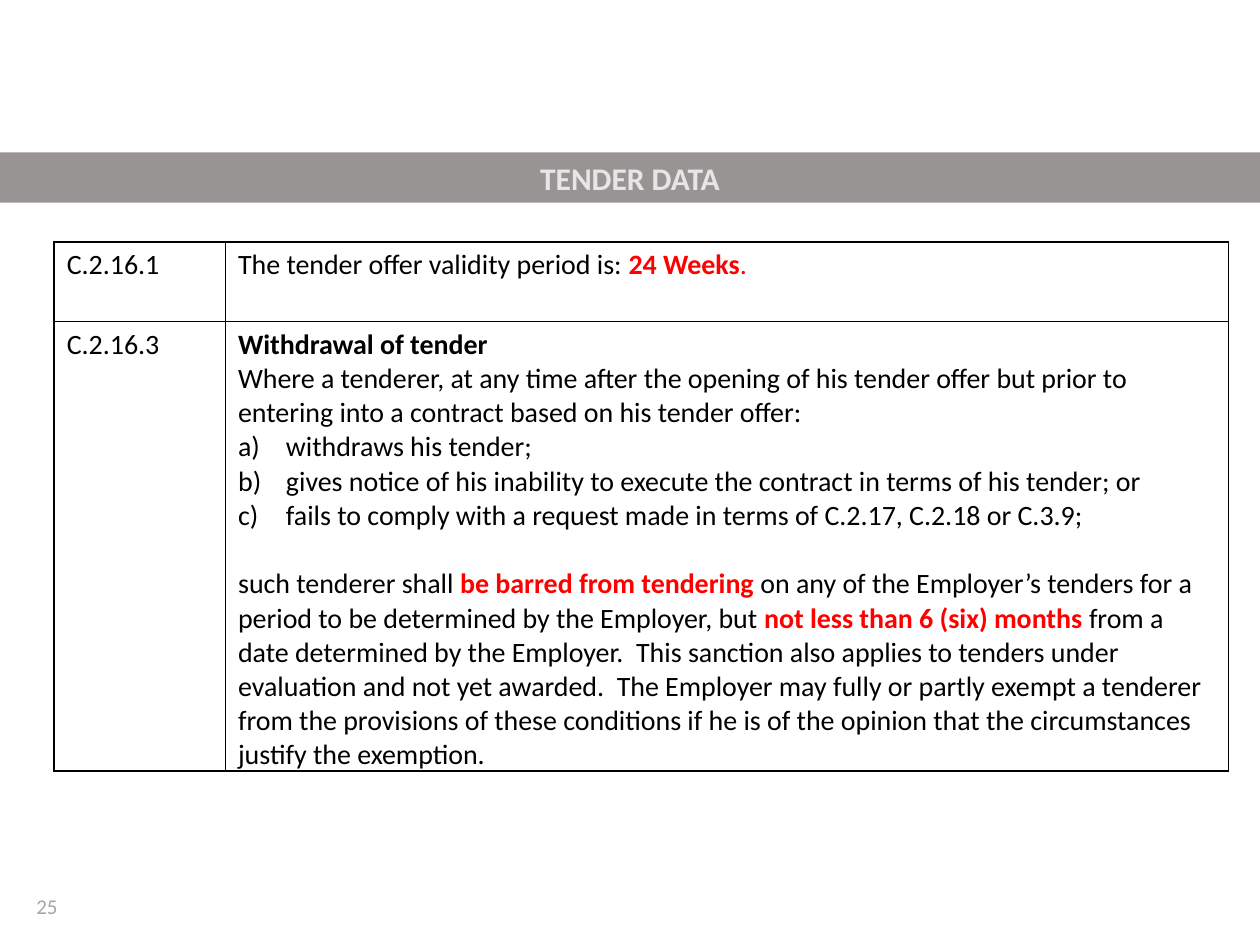
from lxml import etree
from pptx import Presentation
from pptx.dml.color import RGBColor
from pptx.enum import shapes, text
from pptx.oxml import ns
from pptx.util import Inches, Pt

BLACK = RGBColor(0x00, 0x00, 0x00)
RED = RGBColor(0xFF, 0x00, 0x00)
BAND_GRAY = RGBColor(0x98, 0x94, 0x94)
TITLE_GRAY = RGBColor(0xE7, 0xE6, 0xE6)
NUMBER_GRAY = RGBColor(0xA6, 0xA6, 0xA6)

PERIOD = [("The tender offer validity period is: ", BLACK, False),
          ("24 Weeks", RED, True), (".", RED, False)]
HEADING = [("Withdrawal of tender", BLACK, True)]
CONDITION = [("Where a tenderer, at any time after the opening of his tender offer but "
              "prior to entering into a contract based on his tender offer:", BLACK, False)]
GROUNDS = [
    "withdraws his tender;",
    "gives notice of his inability to execute the contract in terms of his tender; or",
    "fails to comply with a request made in terms of C.2.17, C.2.18 or C.3.9;",
]
SANCTION = [
    ("such tenderer shall ", BLACK, False),
    ("be barred from tendering ", RED, True),
    ("on any of the Employer’s tenders for a period to be determined by the Employer, "
     "but ", BLACK, False),
    ("not less than 6 (six) months ", RED, True),
    ("from a date determined by the Employer.  This sanction also applies to tenders "
     "under evaluation and not yet awarded.  The Employer may fully or partly exempt a "
     "tenderer from the provisions of these conditions if he is of the opinion that the "
     "circumstances justify the exemption.", BLACK, False),
]


class TenderSlide:
    font = "Calibri"
    body_size = 16

    def __init__(self, slide):
        self.slide = slide

    def runs(self, paragraph, pieces, size):
        for wording, color, bold in pieces:
            run = paragraph.add_run()
            run.text = wording
            run.font.name = self.font
            run.font.size = Pt(size)
            run.font.bold = bold
            run.font.color.rgb = color

    def band(self, left, top, width, height, title):
        band = self.slide.shapes.add_shape(
            shapes.MSO_SHAPE.RECTANGLE, Inches(left), Inches(top), Inches(width), Inches(height))
        band.shadow.inherit = False
        band.fill.solid()
        band.fill.fore_color.rgb = BAND_GRAY
        band.line.fill.background()
        band.text_frame.vertical_anchor = text.MSO_ANCHOR.MIDDLE
        heading = band.text_frame.paragraphs[0]
        heading.alignment = text.PP_ALIGN.CENTER
        self.runs(heading, [(title, TITLE_GRAY, True)], 18)

    def page_number(self, left, top, width, height, number):
        box = self.slide.shapes.add_textbox(
            Inches(left), Inches(top), Inches(width), Inches(height))
        box.text_frame.word_wrap = True
        self.runs(box.text_frame.paragraphs[0], [(number, NUMBER_GRAY, False)], 12)

    def letter(self, paragraph):
        """Number the paragraph a), b), c) with a hanging indent."""
        properties = paragraph._p.get_or_add_pPr()
        properties.set("marL", str(Inches(0.38)))
        properties.set("indent", str(Inches(-0.38)))
        etree.SubElement(properties, ns.qn("a:buFont"), typeface="+mj-lt")
        etree.SubElement(properties, ns.qn("a:buAutoNum"), type="alphaLcParenR")

    def borders(self, cell):
        properties = cell._tc.get_or_add_tcPr()
        for position, side in enumerate(("lnL", "lnR", "lnT", "lnB")):
            line = etree.Element(ns.qn(f"a:{side}"), w=str(Pt(1)))
            fill = etree.SubElement(line, ns.qn("a:solidFill"))
            etree.SubElement(fill, ns.qn("a:srgbClr"), val=str(BLACK))
            properties.insert(position, line)

    def cell(self, cell, paragraphs):
        """Fill a cell from (runs, is lettered, space before) entries."""
        cell.fill.background()
        cell.margin_bottom = 0
        self.borders(cell)
        for index, (pieces, lettered, gap) in enumerate(paragraphs):
            frame = cell.text_frame
            paragraph = frame.add_paragraph() if index else frame.paragraphs[0]
            if lettered:
                self.letter(paragraph)
            if gap:
                paragraph.space_before = Pt(gap)
            self.runs(paragraph, pieces, self.body_size)

    def table(self, left, top, widths, heights, rows):
        table = self.slide.shapes.add_table(
            len(heights), len(widths), Inches(left), Inches(top),
            Inches(sum(widths)), Inches(sum(heights))).table
        table.first_row = table.horz_banding = False
        for column, width in zip(table.columns, widths):
            column.width = Inches(width)
        for row, height, (clause, paragraphs) in zip(table.rows, heights, rows):
            row.height = Inches(height)
            self.cell(row.cells[0], [([(clause, BLACK, False)], False, 0)])
            self.cell(row.cells[1], paragraphs)


def main():
    deck = Presentation()
    deck.slide_width, deck.slide_height = Inches(10), Inches(7.5)
    page = TenderSlide(deck.slides.add_slide(deck.slide_layouts[6]))

    page.page_number(0.19, 7.04, 2.25, 0.4, "25")
    withdrawal = [(HEADING, False, 0), (CONDITION, False, 0)]
    withdrawal += [([(ground, BLACK, False)], True, 0) for ground in GROUNDS]
    withdrawal.append((SANCTION, False, 19.5))
    page.table(0.43, 1.92, [1.36, 7.96], [0.63, 3.57],
               [("C.2.16.1", [(PERIOD, False, 0)]), ("C.2.16.3", withdrawal)])
    page.band(0, 1.21, 10, 0.4, "TENDER DATA")

    deck.save("out.pptx")


if __name__ == "__main__":
    main()
